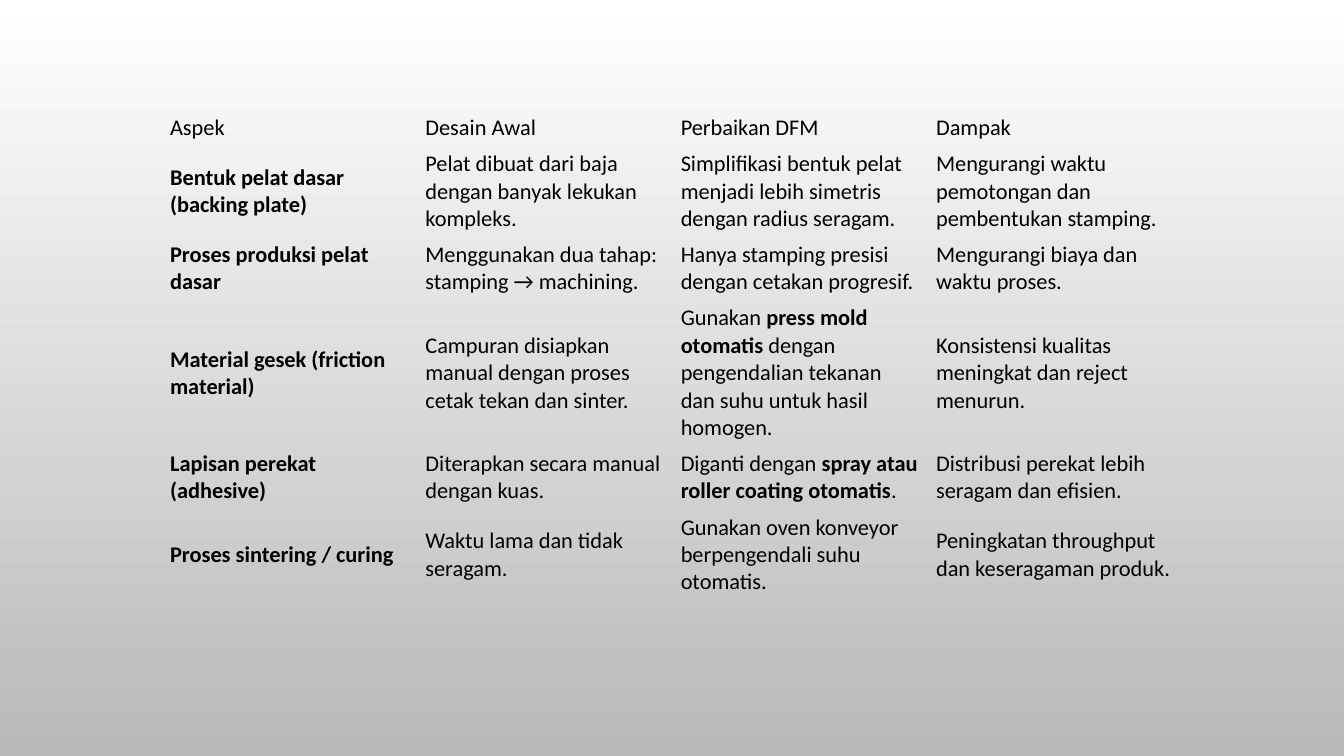
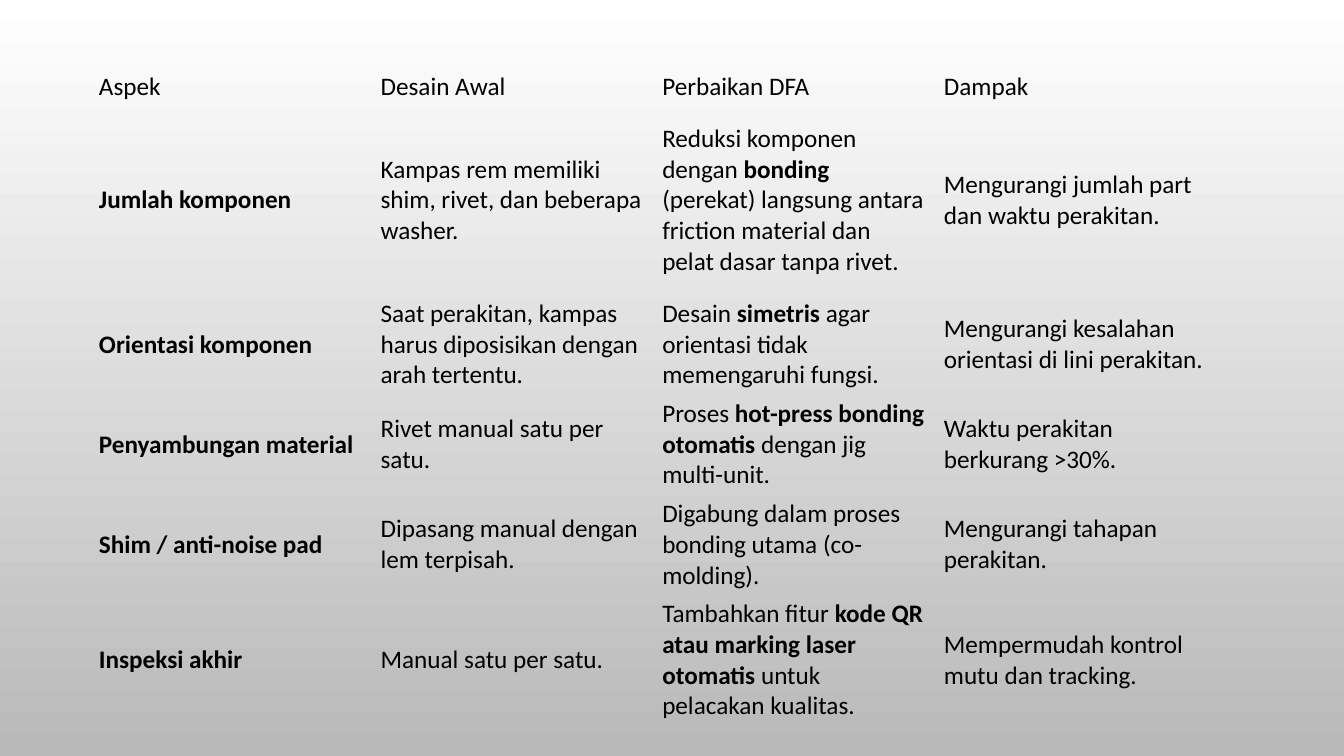
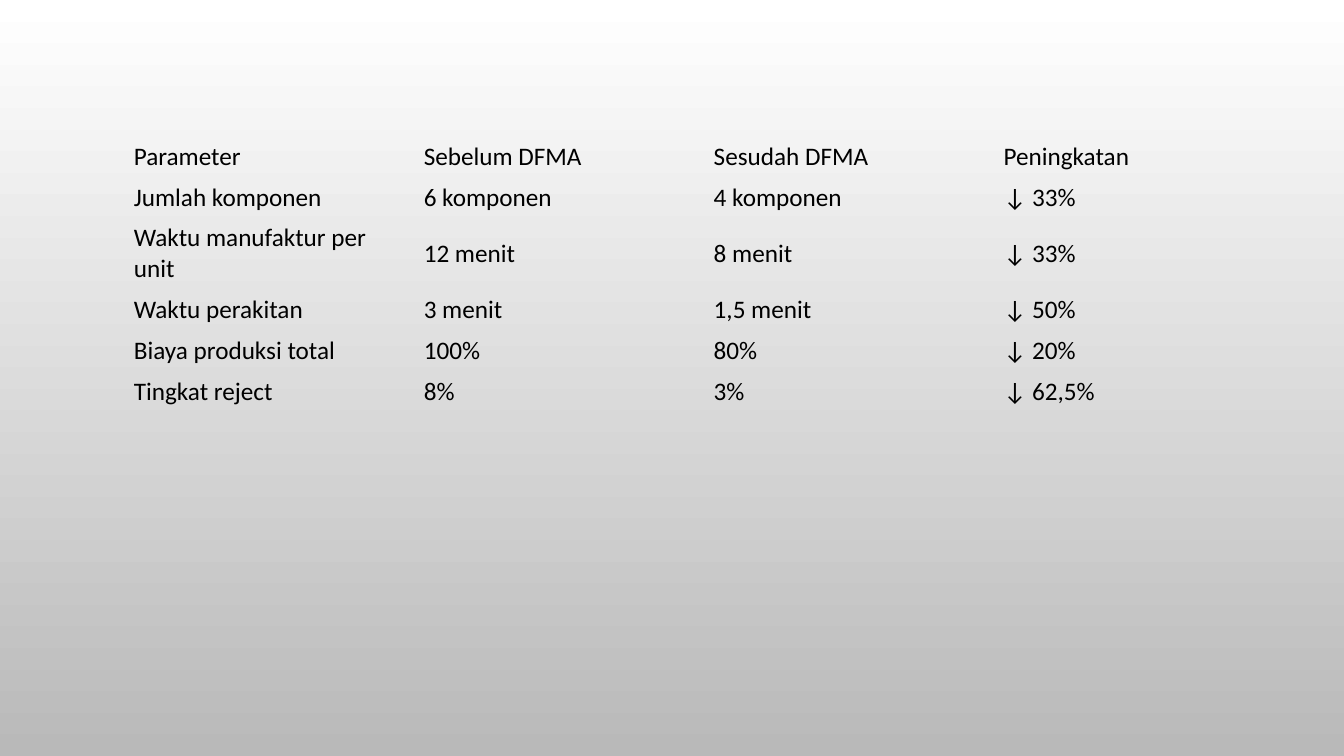
from dataclasses import dataclass

from pptx import Presentation
from pptx.dml.color import RGBColor
from pptx.enum.text import MSO_ANCHOR
from pptx.oxml.ns import qn
from pptx.util import Pt

MIDDLE = MSO_ANCHOR.MIDDLE
BLANK_LAYOUT = 6
PLAIN_TABLE_STYLE = "{2D5ABB26-0587-4C30-8999-92F81FD0307C}"
BOLD_MARK = "**"


@dataclass(frozen=True)
class Theme:
    font: str = "Calibri"
    text: RGBColor = RGBColor(0x00, 0x00, 0x00)
    gradient_top: RGBColor = RGBColor(0xFF, 0xFF, 0xFF)
    gradient_bottom: RGBColor = RGBColor(0xB9, 0xB9, 0xB9)
    compact_size: float = 16
    regular_size: float = 18


THEME = Theme()

MANUFACTURING_ROWS = [
    ["Aspek", "Desain Awal", "Perbaikan DFM", "Dampak"],
    ["**Bentuk pelat dasar (backing plate)**",
     "Pelat dibuat dari baja dengan banyak lekukan kompleks.",
     "Simplifikasi bentuk pelat menjadi lebih simetris dengan radius seragam.",
     "Mengurangi waktu pemotongan dan pembentukan stamping."],
    ["**Proses produksi pelat dasar**",
     "Menggunakan dua tahap: stamping → machining.",
     "Hanya stamping presisi dengan cetakan progresif.",
     "Mengurangi biaya dan waktu proses."],
    ["**Material gesek (friction material)**",
     "Campuran disiapkan manual dengan proses cetak tekan dan sinter.",
     "Gunakan **press mold otomatis** dengan pengendalian tekanan dan suhu "
     "untuk hasil homogen.",
     "Konsistensi kualitas meningkat dan reject menurun."],
    ["**Lapisan perekat (adhesive)**",
     "Diterapkan secara manual dengan kuas.",
     "Diganti dengan **spray atau roller coating otomatis**.",
     "Distribusi perekat lebih seragam dan efisien."],
    ["**Proses sintering / curing**",
     "Waktu lama dan tidak seragam.",
     "Gunakan oven konveyor berpengendali suhu otomatis.",
     "Peningkatan throughput dan keseragaman produk."],
]

ASSEMBLY_ROWS = [
    ["Aspek", "Desain Awal", "Perbaikan DFA", "Dampak"],
    ["**Jumlah komponen**",
     "Kampas rem memiliki shim, rivet, dan beberapa washer.",
     "Reduksi komponen dengan **bonding** (perekat) langsung antara friction "
     "material dan pelat dasar tanpa rivet.",
     "Mengurangi jumlah part dan waktu perakitan."],
    ["**Orientasi komponen**",
     "Saat perakitan, kampas harus diposisikan dengan arah tertentu.",
     "Desain **simetris** agar orientasi tidak memengaruhi fungsi.",
     "Mengurangi kesalahan orientasi di lini perakitan."],
    ["**Penyambungan material**",
     "Rivet manual satu per satu.",
     "Proses **hot-press bonding otomatis** dengan jig multi-unit.",
     "Waktu perakitan berkurang >30%."],
    ["**Shim / anti-noise pad**",
     "Dipasang manual dengan lem terpisah.",
     "Digabung dalam proses bonding utama (co-molding).",
     "Mengurangi tahapan perakitan."],
    ["**Inspeksi akhir**",
     "Manual satu per satu.",
     "Tambahkan fitur **kode QR atau marking laser otomatis** untuk "
     "pelacakan kualitas.",
     "Mempermudah kontrol mutu dan tracking."],
]

RESULT_ROWS = [
    ["Parameter", "Sebelum DFMA", "Sesudah DFMA", "Peningkatan"],
    ["Jumlah komponen", "6 komponen", "4 komponen", "↓ 33%"],
    ["Waktu manufaktur per unit", "12 menit", "8 menit", "↓ 33%"],
    ["Waktu perakitan", "3 menit", "1,5 menit", "↓ 50%"],
    ["Biaya produksi total", "100%", "80%", "↓ 20%"],
    ["Tingkat reject", "8%", "3%", "↓ 62,5%"],
]


def set_background(master):
    fill = master.background.fill
    fill.gradient()
    fill.gradient_angle = 270
    colors = (THEME.gradient_top, THEME.gradient_bottom)
    for stop, color in zip(fill.gradient_stops, colors):
        stop.color.rgb = color


def fill_cell(cell, text, size, inset_x, inset_y):
    cell.fill.background()
    cell.vertical_anchor = MIDDLE
    cell.margin_left = cell.margin_right = Pt(inset_x)
    cell.margin_top = cell.margin_bottom = Pt(inset_y)
    paragraph = cell.text_frame.paragraphs[0]
    for index, part in enumerate(text.split(BOLD_MARK)):
        if part:
            run = paragraph.add_run()
            run.text = part
            run.font.name = THEME.font
            run.font.size = Pt(size)
            run.font.bold = index % 2 == 1
            run.font.color.rgb = THEME.text


def add_table_slide(presentation, rows, box, row_heights, size, insets):
    slide = presentation.slides.add_slide(presentation.slide_layouts[BLANK_LAYOUT])
    left, top, width = box
    shape = slide.shapes.add_table(
        len(rows), len(rows[0]),
        Pt(left), Pt(top), Pt(width), Pt(sum(row_heights)))
    table = shape.table
    table.first_row = False
    table.horz_banding = False
    style = shape.element.find(".//" + qn("a:tableStyleId"))
    style.text = PLAIN_TABLE_STYLE
    for table_row, height, texts in zip(table.rows, row_heights, rows):
        table_row.height = Pt(height)
        for cell, text in zip(table_row.cells, texts):
            fill_cell(cell, text, size, *insets)


def main():
    presentation = Presentation()
    presentation.slide_width = Pt(960)
    presentation.slide_height = Pt(540)
    set_background(presentation.slide_master)
    add_table_slide(
        presentation, MANUFACTURING_ROWS, (115.2, 78.5, 729.6),
        [25.2, 63.4, 44.6, 101.5, 44.6, 63.4], THEME.compact_size, (6.3, 3.1))
    add_table_slide(
        presentation, ASSEMBLY_ROWS, (64.8, 48.2, 804.8),
        [27.4, 134.6, 69.8, 69.8, 69.8, 91.4], THEME.regular_size, (5.9, 2.8))
    add_table_slide(
        presentation, RESULT_ROWS, (88.4, 97.2, 828.4),
        [28.8] * len(RESULT_ROWS), THEME.regular_size, (7.2, 3.6))
    presentation.save("out.pptx")


if __name__ == "__main__":
    main()
